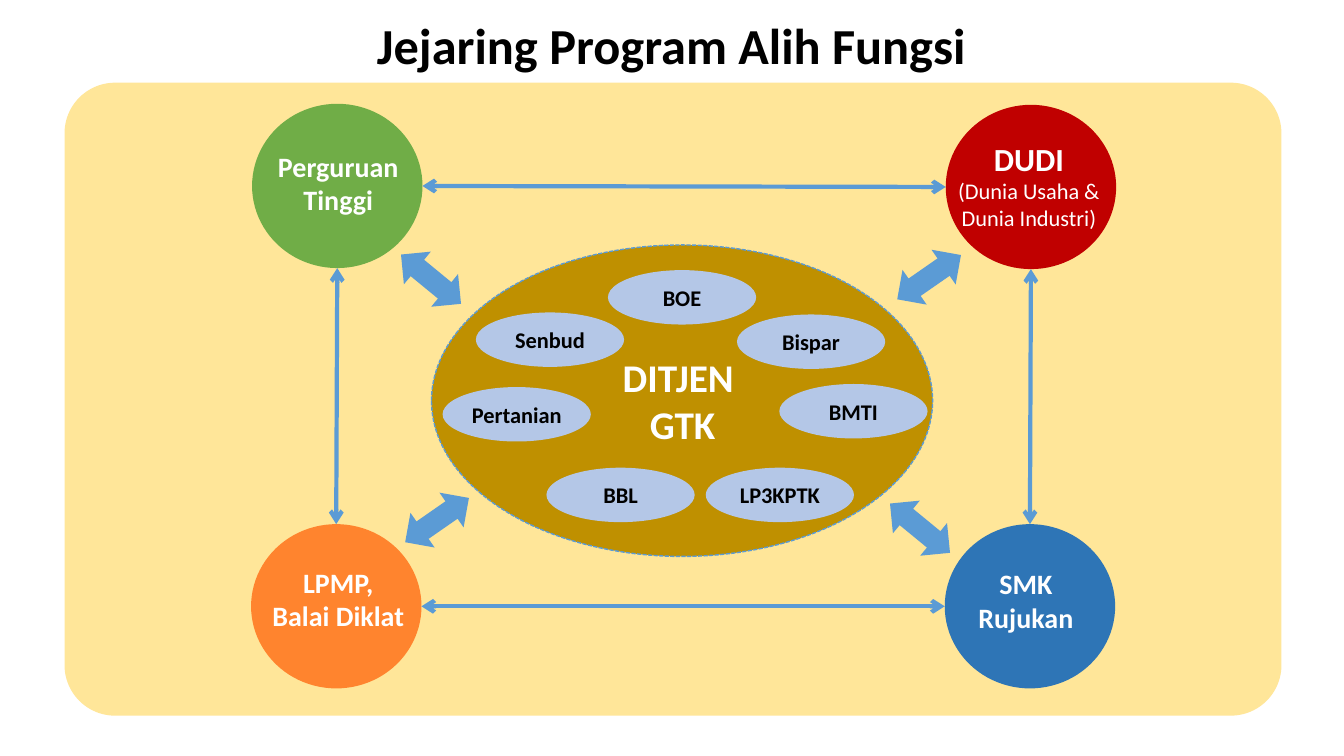
from pptx import Presentation
from pptx.dml.color import RGBColor
from pptx.enum.dml import MSO_LINE
from pptx.enum.shapes import MSO_CONNECTOR, MSO_SHAPE
from pptx.enum.text import MSO_ANCHOR, PP_ALIGN
from pptx.oxml.ns import qn
from pptx.util import Inches, Pt
from lxml import etree

ELLIPSE = MSO_SHAPE.OVAL
PANEL = MSO_SHAPE.ROUNDED_RECTANGLE
DOUBLE_ARROW = MSO_SHAPE.LEFT_RIGHT_ARROW
STRAIGHT = MSO_CONNECTOR.STRAIGHT
CENTER = PP_ALIGN.CENTER
MIDDLE = MSO_ANCHOR.MIDDLE
DASH = MSO_LINE.SQUARE_DOT

FONT = "Calibri"
WHITE, BLACK, BLUE = "FFFFFF", "000000", "5B9BD5"
PARTNER_SIZE = (1.69, 1.63)
UNIT_SIZE = (1.47, 0.54)
ARROW_SIZE = (0.77, 0.42)

# Partner: circle left and top, fill, label offset and size, lines as (text, size, bold)
PARTNERS = {
    "smk": (9.37, 5.2, "2E75B6", (-0.03, 0.37, 1.67, 0.77),
            [("SMK", 20, True), ("Rujukan", 20, True)]),
    "dudi": (9.38, 1.04, "C00000", (0.02, 0.29, 1.61, 1.03),
             [("DUDI", 23, True), ("(Dunia Usaha &", 16, False),
              ("Dunia Industri)", 16, False)]),
    "campus": (2.5, 1.03, "70AD47", (0.07, 0.4, 1.57, 0.77),
               [("Perguruan Tinggi", 20, True)]),
    "lpmp": (2.49, 5.2, "FF842E", (-0.03, 0.36, 1.79, 0.77),
             [("LPMP,", 20, True), ("Balai Diklat", 20, True)]),
}
LINKS = [("campus", "right", "dudi", "left"), ("lpmp", "right", "smk", "left"),
         ("smk", "top", "dudi", "bottom"), ("campus", "bottom", "lpmp", "top")]

# Offsets from the corner of the hub
UNITS = [("BBL", 1.14, 2.21), ("BMTI", 3.45, 1.38), ("BOE", 1.75, 0.25),
         ("Bispar", 3.03, 0.69), ("Senbud", 0.44, 0.67),
         ("Pertanian", 0.11, 1.41), ("LP3KPTK", 2.72, 2.21)]
# Offsets from the corner of the hub, then rotation
HUB_ARROWS = [(-0.39, 0.13, 39.4), (4.46, 2.6, 39.4),
              (4.55, 0.11, 325.2), (-0.33, 2.52, 325.2)]


def rgb(color):
    return RGBColor.from_string(color)


def add_solid(s, kind, x, y, w, h, color):
    """Add a preset shape with a plain fill, no outline and no shadow."""
    sp = s.shapes.add_shape(kind, Inches(x), Inches(y), Inches(w), Inches(h))
    sp.shadow.inherit = False
    sp.fill.solid()
    sp.fill.fore_color.rgb = rgb(color)
    sp.line.fill.background()
    return sp


def write_lines(tf, lines, color):
    tf.word_wrap = True
    for i, (text, size, bold) in enumerate(lines):
        p = tf.add_paragraph() if i else tf.paragraphs[0]
        p.text = text
        p.alignment = CENTER
        p.font.name = FONT
        p.font.size = Pt(size)
        p.font.bold = bold
        p.font.color.rgb = rgb(color)


def add_label(s, x, y, w, h, lines, color):
    box = s.shapes.add_textbox(Inches(x), Inches(y), Inches(w), Inches(h))
    write_lines(box.text_frame, lines, color)


def add_partner(s, x, y, color, label, lines):
    add_solid(s, ELLIPSE, x, y, *PARTNER_SIZE, color)
    dx, dy, w, h = label
    add_label(s, x + dx, y + dy, w, h, lines, WHITE)


def partner_edge(name, side):
    """Return the middle of one side of a partner circle."""
    x, y = PARTNERS[name][:2]
    w, h = PARTNER_SIZE
    return {"left": (x, y + h / 2), "right": (x + w, y + h / 2),
            "top": (x + w / 2, y), "bottom": (x + w / 2, y + h)}[side]


def add_link(s, start, end):
    """Add a thin line with an arrowhead at both ends."""
    line = s.shapes.add_connector(STRAIGHT, *(Inches(v) for v in start + end))
    line.line.color.rgb = rgb(BLUE)
    line.line.width = Pt(3)
    ln = line.line._get_or_add_ln()
    for tag in ("a:headEnd", "a:tailEnd"):
        etree.SubElement(ln, qn(tag), type="arrow")
    etree.SubElement(line._element.spPr, qn("a:effectLst"))


def add_hub(s, x, y, w, h):
    hub = add_solid(s, ELLIPSE, x, y, w, h, "BF9000")
    hub.line.color.rgb = rgb(BLUE)
    hub.line.width = Pt(1)
    hub.line.dash_style = DASH
    for name, dx, dy in UNITS:
        unit = add_solid(s, ELLIPSE, x + dx, y + dy, *UNIT_SIZE, "B4C7E7")
        tf = unit.text_frame
        tf.margin_left = tf.margin_right = 0
        tf.vertical_anchor = MIDDLE
        write_lines(tf, [(name, 16, True)], BLACK)
    add_label(s, x + 1.28, y + 1.03, 2.42, 1.08,
              [("DITJEN ", 28, True), ("GTK", 28, True)], WHITE)
    for dx, dy, angle in HUB_ARROWS:
        arrow = add_solid(s, DOUBLE_ARROW, x + dx, y + dy, *ARROW_SIZE, BLUE)
        arrow.rotation = angle


def main():
    prs = Presentation()
    prs.slide_width, prs.slide_height = Inches(13.33), Inches(7.5)
    s = prs.slides.add_slide(prs.slide_layouts[6])
    panel = add_solid(s, PANEL, 0.64, 0.82, 12.07, 6.28, "FFE699")
    panel.adjustments[0] = 0.08
    add_label(s, 0.17, 0.09, 12.98, 0.71,
              [("Jejaring Program Alih Fungsi", 36, True)], BLACK)
    for partner in PARTNERS.values():
        add_partner(s, *partner)
    for first, first_side, second, second_side in LINKS:
        add_link(s, partner_edge(first, first_side),
                 partner_edge(second, second_side))
    add_hub(s, 4.28, 2.43, 4.97, 3.09)
    prs.save("out.pptx")


if __name__ == "__main__":
    main()
